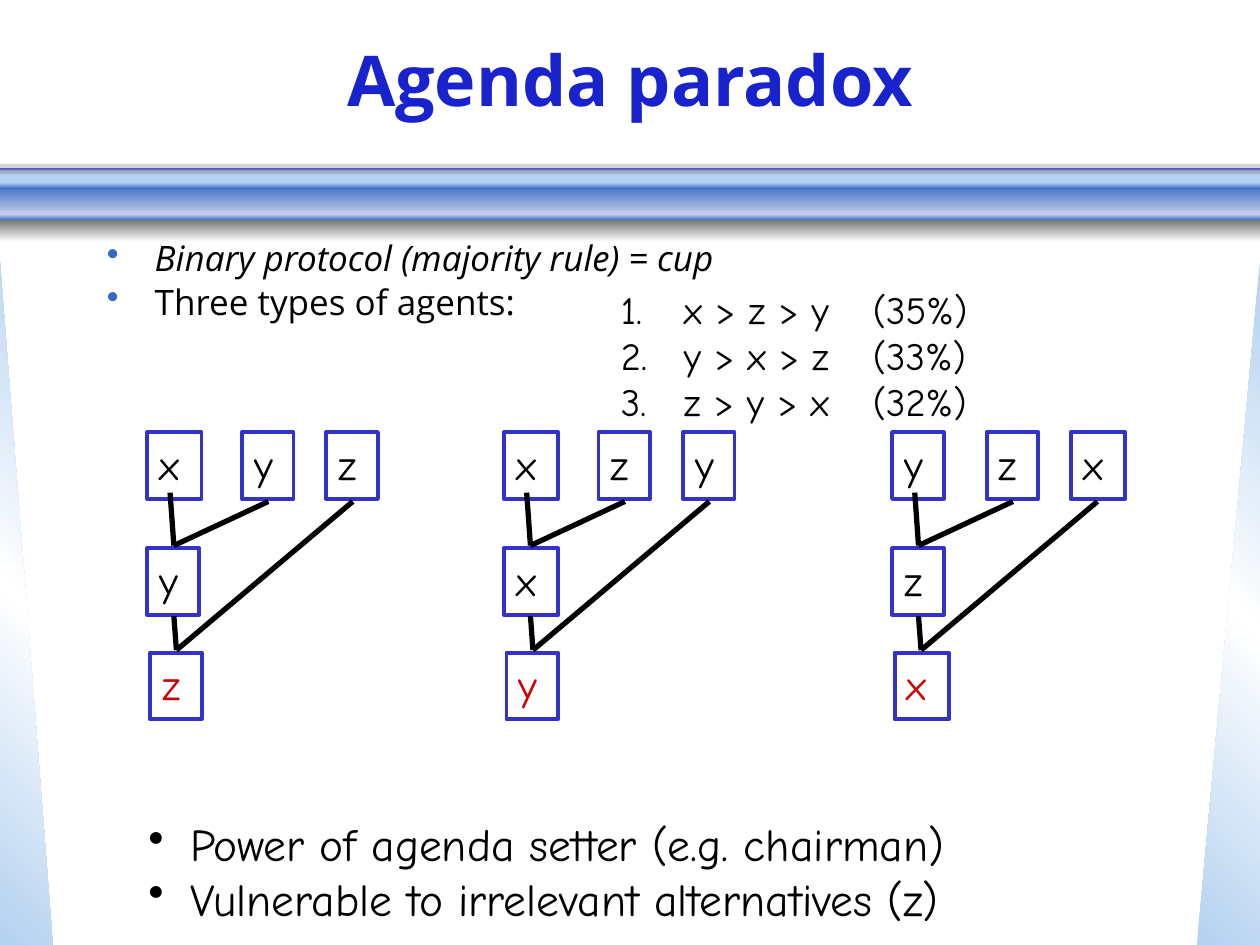
from lxml import etree
from pptx import Presentation
from pptx.dml.color import RGBColor
from pptx.enum.shapes import MSO_CONNECTOR, MSO_SHAPE
from pptx.enum.text import MSO_ANCHOR, PP_ALIGN
from pptx.oxml import parse_xml
from pptx.oxml.ns import nsdecls, qn
from pptx.util import Inches, Pt

RECT, TRIANGLE = MSO_SHAPE.RECTANGLE, MSO_SHAPE.RIGHT_TRIANGLE
LINE = MSO_CONNECTOR.STRAIGHT
MIDDLE, CENTER = MSO_ANCHOR.MIDDLE, PP_ALIGN.CENTER

BLACK = RGBColor(0x00, 0x00, 0x00)
RED = RGBColor(0xCC, 0x00, 0x00)
TITLE_BLUE = RGBColor(0x18, 0x22, 0xCD)
BOX_BLUE = RGBColor(0x33, 0x33, 0xCC)
MID_BLUE = RGBColor(0x35, 0x68, 0xC7)
PALE_BLUE = RGBColor(0xB3, 0xD1, 0xF0)
LAVENDER = RGBColor(0xCA, 0xD0, 0xE9)
LILAC = RGBColor(0xBA, 0xBB, 0xE7)
GREY = RGBColor(0x77, 0x77, 0x77)
WHITE = RGBColor(0xFF, 0xFF, 0xFF)
SANS, COMIC = "Open Sans", "Comic Neue"

prs = Presentation()
prs.slide_width, prs.slide_height = Inches(10), Inches(7.5)
s = prs.slides.add_slide(prs.slide_layouts[6])


def add_band(kind, box, colors, angle=90, alpha=100):
    """Add a borderless shape with evenly spaced gradient stops, or one plain colour."""
    sp = s.shapes.add_shape(kind, *map(Inches, box))
    sp.shadow.inherit = False
    sp.line.fill.background()
    if len(colors) == 1:
        sp.fill.solid()
        sp.fill.fore_color.rgb = colors[0]
        color = sp.fill._xPr.find(qn("a:solidFill"))[0]
        if alpha < 100:
            etree.SubElement(color, qn("a:alpha"), val=str(alpha * 1000))
        return sp
    stops = "".join(
        f'<a:gs pos="{100000 * i // (len(colors) - 1)}"><a:srgbClr val="{c}"/></a:gs>'
        for i, c in enumerate(colors))
    sp._element.spPr.find(qn("a:prstGeom")).addnext(parse_xml(
        f'<a:gradFill {nsdecls("a")} rotWithShape="0"><a:gsLst>{stops}</a:gsLst>'
        f'<a:lin ang="{angle * 60000}" scaled="0"/></a:gradFill>'))
    return sp


def add_text(box, lines, size, font, color=BLACK, indent=0, bullet=None, bullet_color=None):
    """Add a text box; bullet is a character, or 'auto' for numbers."""
    tf = s.shapes.add_textbox(*map(Inches, box)).text_frame
    tf.word_wrap = True
    for i, line in enumerate(lines):
        p = tf.paragraphs[0] if i == 0 else tf.add_paragraph()
        if bullet:
            pPr = p._p.get_or_add_pPr()
            pPr.set("marL", str(Inches(indent)))
            pPr.set("indent", str(-Inches(indent)))
            if bullet_color is not None:
                clr = etree.SubElement(pPr, qn("a:buClr"))
                etree.SubElement(clr, qn("a:srgbClr"), val=str(bullet_color))
            if bullet == "auto":
                etree.SubElement(pPr, qn("a:buAutoNum"), type="arabicPeriod")
            else:
                etree.SubElement(pPr, qn("a:buChar"), char=bullet)
        r = p.add_run()
        r.text = line
        r.font.size, r.font.name = Pt(size), font
        r.font.color.rgb = color
    return tf


# Side wedges and header band
WEDGE = [PALE_BLUE, WHITE, PALE_BLUE]
add_band(TRIANGLE, (0, 2.08, 0.42, 5.42), WEDGE, 315)
right = add_band(TRIANGLE, (9.5, 2.08, 0.5, 5.42), WEDGE, 45)
right._element.spPr.find(qn("a:xfrm")).set("flipH", "1")

for top, height, colors in [
    (1.36, 0.1, [PALE_BLUE]),
    (1.46, 0.25, [MID_BLUE, LAVENDER]),
    (1.33, 0.03, [TITLE_BLUE, LILAC]),
    (1.7, 0.05, [MID_BLUE, LAVENDER][::-1]),
    (1.45, 0.05, [PALE_BLUE, MID_BLUE]),
    (1.75, 0.17, [GREY, WHITE]),
]:
    add_band(RECT, (0, top, 10, height), colors)
add_band(RECT, (0, 1.3, 10, 0.08), [GREY], alpha=31)

# Text
tf = add_text((0.75, 0.33, 8.5, 0.58), ["Agenda paradox"], 40, SANS, TITLE_BLUE)
tf.vertical_anchor = MIDDLE
tf.paragraphs[0].alignment = CENTER
tf.paragraphs[0].runs[0].font.bold = True

tf = add_text((0.75, 1.83, 8.5, 1),
              ["Binary protocol (majority rule) = cup", "Three types of agents:"],
              20, SANS, indent=0.38, bullet="•", bullet_color=MID_BLUE)
tf.paragraphs[0].runs[0].font.italic = True
tf.paragraphs[1].space_before = Pt(1)

add_text((1.08, 6.43, 8.08, 1.07),
         ["Power of agenda setter (e.g. chairman)",
          "Vulnerable to irrelevant alternatives (z)"],
         26, COMIC, indent=0.33, bullet="•")
add_text((4.83, 2.22, 3.33, 1.2),
         ["x > z > y\t(35%)", "y > x > z\t(33%)", "z > y > x\t(32%)"],
         22, COMIC, indent=0.5, bullet="auto")

# Cup trees: three entrants, the first winner, the final winner
SLOTS = [(0, 3.43), (0.75, 3.43), (1.42, 3.43), (0, 4.35), (0.02, 5.18)]
FIRST, FINAL = (0.21, 4.33), (0.23, 5.16)
EDGES = [((0.18, 3.91), FIRST), ((0.21, 4.89), FINAL),
         ((0.96, 3.98), FIRST), ((1.63, 3.98), FINAL)]

for left, names in [(1.17, "xyzyz"), (4, "xzyxy"), (7.08, "yzxzx")]:
    for i, ((dx, top), name) in enumerate(zip(SLOTS, names)):
        width = 0.43 if name == "x" else 0.41
        color = RED if i == len(SLOTS) - 1 else BLACK
        tf = add_text((left + dx, top, width, 0.53), [name], 24, COMIC, color)
        tf.word_wrap = False
        sp = s.shapes[-1]
        sp.line.color.rgb, sp.line.width = BOX_BLUE, Pt(2.25)
    for (x1, y1), (x2, y2) in EDGES:
        c = s.shapes.add_connector(LINE, *map(Inches, (left + x1, y1, left + x2, y2)))
        c.line.color.rgb, c.line.width = BLACK, Pt(3)
        etree.SubElement(c._element.spPr, qn("a:effectLst"))

prs.save("out.pptx")
